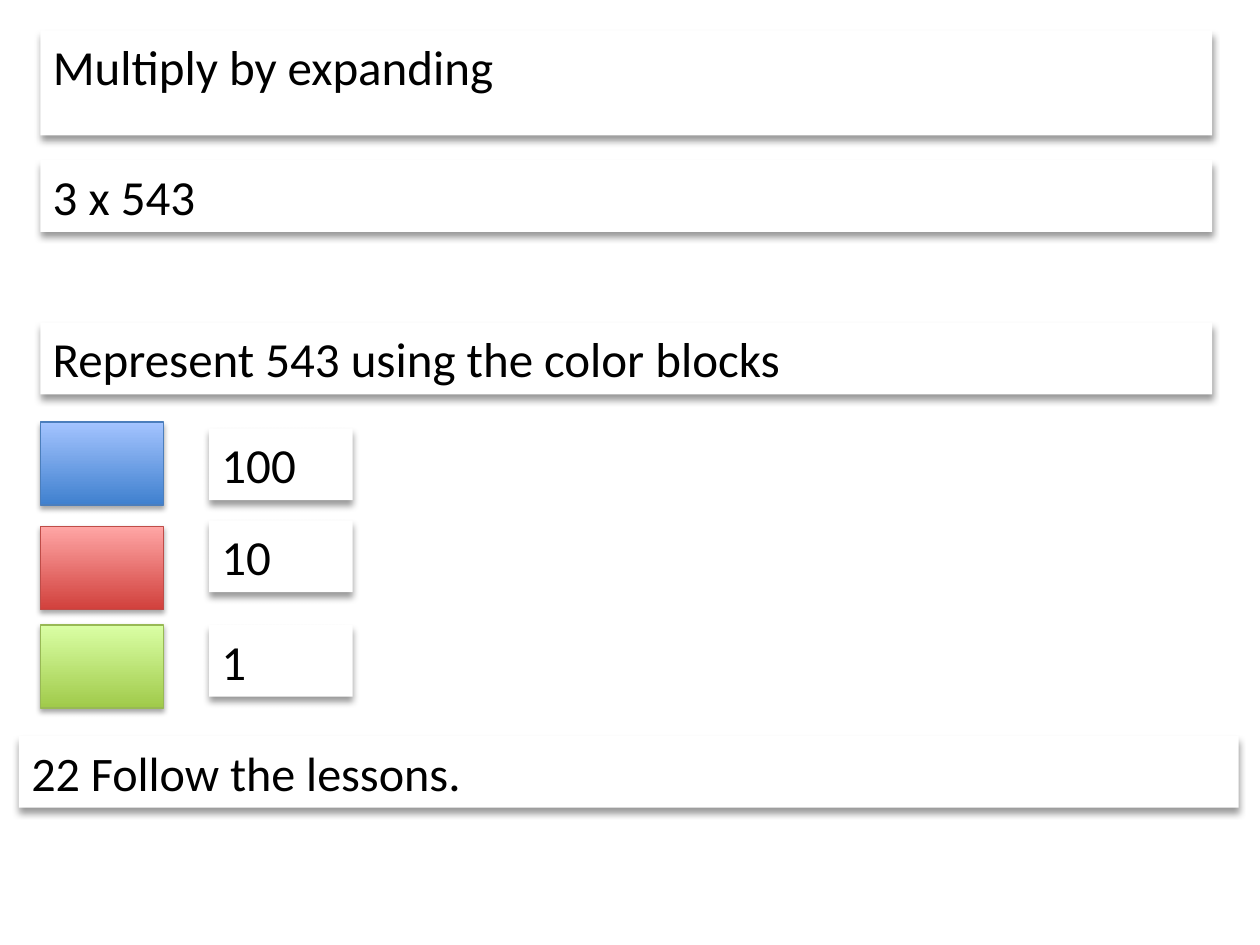
"""Build the slide on multiplying 3 x 543 by expanding with color blocks."""
from dataclasses import dataclass

from lxml import etree
from pptx import Presentation
from pptx import util as u
from pptx.dml.color import RGBColor
from pptx.enum import shapes, text
from pptx.oxml.ns import qn


@dataclass(frozen=True)
class Theme:
    font: str = "Calibri"
    size: float = 28
    small: float = 27.5
    ink: str = "000000"
    paper: str = "FFFFFF"
    blue: tuple = ("3F80CE", "A4C4FF", "4B7EBC")
    red: tuple = ("D1403C", "FFA6A5", "BF4C48")
    green: tuple = ("A0CA4A", "DAFFA5", "98B955")


theme = Theme()
PX = 9144


def cast_shadow(shape, blur, distance, opacity):
    shape.shadow.inherit = False
    effects = shape._element.spPr.find(qn("a:effectLst"))
    shadow = etree.SubElement(
        effects, qn("a:outerShdw"), blurRad=str(u.Pt(blur)),
        dist=str(u.Pt(distance)), dir="5400000", rotWithShape="0")
    color = etree.SubElement(shadow, qn("a:srgbClr"), val=theme.ink)
    etree.SubElement(color, qn("a:alpha"), val=str(opacity * 1000))


def write_panel(shape, left, top, width, runs):
    shape.left, shape.top = left * PX, top * PX
    shape.width, shape.height = width * PX, 57 * PX
    shape.fill.solid()
    shape.fill.fore_color.rgb = RGBColor.from_string(theme.paper)
    cast_shadow(shape, 4, 3, 40)
    frame = shape.text_frame
    frame.word_wrap = True
    frame.auto_size = text.MSO_AUTO_SIZE.SHAPE_TO_FIT_TEXT
    frame.vertical_anchor = text.MSO_ANCHOR.TOP
    paragraph = frame.paragraphs[0]
    paragraph.alignment = text.PP_ALIGN.LEFT
    for wording, size in runs:
        run = paragraph.add_run()
        run.text = wording
        run.font.name = theme.font
        run.font.size = u.Pt(size)
        run.font.color.rgb = RGBColor.from_string(theme.ink)


presentation = Presentation()
presentation.slide_width, presentation.slide_height = 1000 * PX, 750 * PX
slide = presentation.slides.add_slide(presentation.slide_layouts[5])

write_panel(slide.shapes.title, 32, 24, 930, [("Multiply by expanding", theme.size)])

panels = [
    (15, 584, 968, [("22 Follow the lessons", theme.small), (".", theme.size)]),
    (32, 127, 930, [("3 x 543", theme.size)]),
    (32, 256, 930, [("Represent 543 using the color blocks", theme.size)]),
    (166, 340, 114, [("100", theme.size)]),
    (166, 413, 114, [("10", theme.size)]),
    (166, 496, 114, [("1", theme.size)]),
]
for left, top, width, runs in panels:
    write_panel(slide.shapes.add_textbox(0, 0, PX, PX), left, top, width, runs)

for top, (dark, light, edge) in [(335, theme.blue), (418, theme.red), (496, theme.green)]:
    block = slide.shapes.add_shape(
        shapes.MSO_SHAPE.RECTANGLE, 32 * PX, top * PX, 98 * PX, 66 * PX)
    block.fill.gradient()
    block.fill.gradient_angle = 90
    for stop, color in zip(block.fill.gradient_stops, (dark, light)):
        stop.color.rgb = RGBColor.from_string(color)
    block.line.color.rgb = RGBColor.from_string(edge)
    block.line.width = u.Pt(0.75)
    cast_shadow(block, 3.1, 1.8, 35)

presentation.save("out.pptx")
